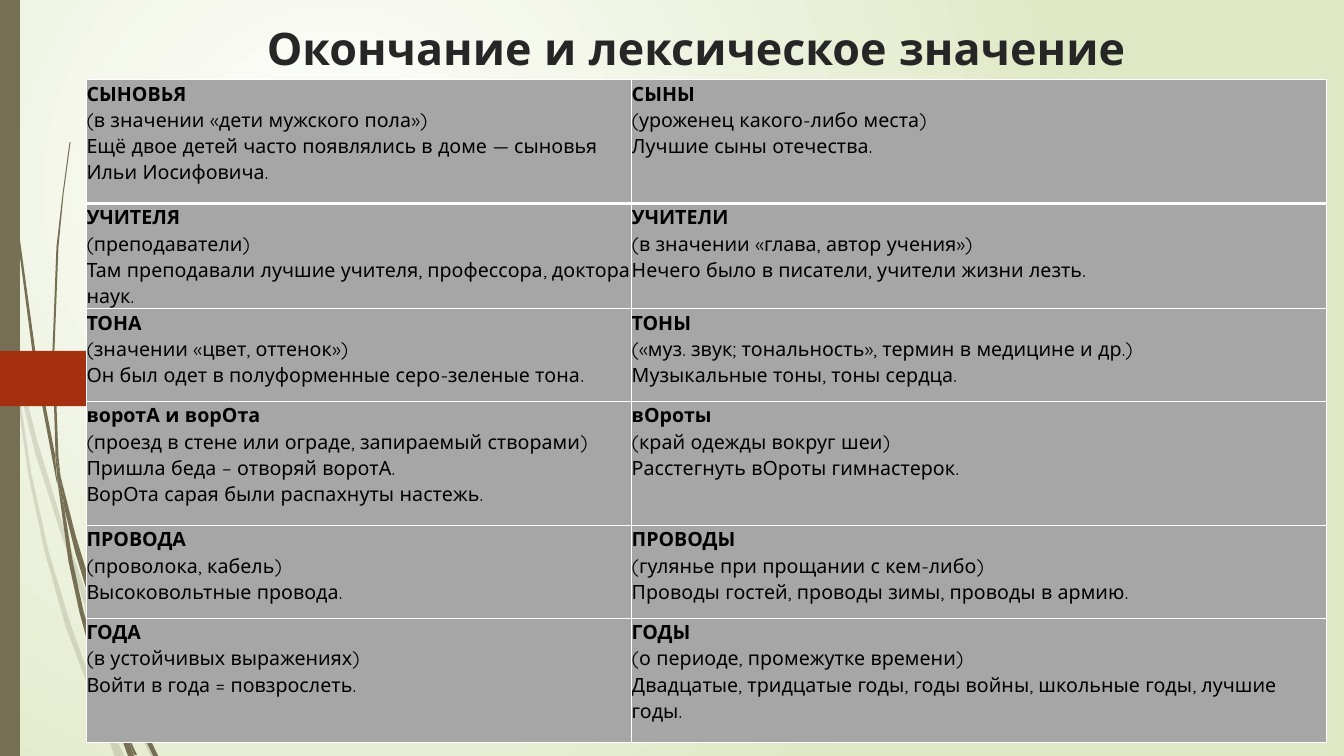
from dataclasses import dataclass

from lxml import etree
from pptx import Presentation
from pptx.dml.color import RGBColor
from pptx.enum.shapes import MSO_SHAPE
from pptx.enum.text import MSO_ANCHOR, PP_ALIGN
from pptx.oxml.ns import qn
from pptx.util import Cm, Pt

RECTANGLE = MSO_SHAPE.RECTANGLE
BOTTOM = MSO_ANCHOR.BOTTOM
CENTER = PP_ALIGN.CENTER
GRID_UNIT = Cm(0.0254)


@dataclass(frozen=True)
class Theme:
    """Colours, font and type sizes of the slide."""
    font: str = "Quicksand"
    title_size: int = 32
    table_size: int = 14
    title: str = "262626"
    text: str = "000000"
    white: str = "FFFFFF"
    glow: str = "DFE8C4"
    stem: str = "766F54"
    marker: str = "A53010"
    cell: str = "A6A6A6"


PALE_STEMS = [
    [(11, 350), (9, 322), (0, 282), (0, 299), (10, 344)],
    [(58, 522), (84, 600), (85, 587), (62, 520), (36, 434), (14, 345), (17, 376), (35, 450)],
    [(92, 607), (88, 596), (88, 610), (123, 694), (150, 751), (155, 751), (127, 692)],
    [(119, 751), (124, 751), (105, 711)],
    [(93, 683), (70, 619), (48, 546), (31, 469), (17, 376), (11, 350), (28, 470), (44, 546),
     (65, 621), (92, 693), (101, 714), (99, 707)],
    [(84, 599), (87, 646), (93, 683), (96, 692), (105, 712), (103, 707), (91, 646),
     (88, 610), (88, 608)],
    [(88, 584), (95, 502), (110, 462), (133, 404), (160, 349), (193, 296), (229, 245),
     (268, 198), (290, 175), (312, 154), (312, 153), (289, 175), (268, 197), (228, 244),
     (191, 294), (158, 348), (130, 402), (107, 461), (92, 502), (85, 584), (85, 586), (88, 596)],
    [(101, 714), (114, 751), (119, 751)],
    [(88, 608), (88, 610), (88, 596), (85, 586), (84, 599)],
    [(96, 692), (93, 683), (99, 707), (101, 714), (119, 751), (105, 711)],
]
DARK_STEMS = [
    [(7, 110), (17, 233), (33, 355), (56, 477), (57, 481), (55, 457), (55, 453), (36, 355),
     (19, 232), (8, 109), (5, 48), (4, 0), (3, 0), (4, 48)],
    [(88, 592), (106, 645), (106, 631), (93, 590), (75, 531), (60, 472), (64, 505), (75, 549)],
    [(113, 649), (110, 641), (111, 656), (132, 708), (152, 750), (157, 750), (136, 706)],
    [(110, 691), (98, 657), (83, 607), (72, 556), (64, 505), (57, 477), (68, 557), (79, 608),
     (93, 659), (111, 708), (117, 722), (116, 717)],
    [(60, 472), (58, 453), (54, 349), (58, 245), (63, 193), (70, 141), (69, 141), (62, 193),
     (56, 245), (52, 349), (55, 449)],
    [(133, 749), (136, 749), (122, 719)],
    [(57, 477), (64, 505), (60, 472), (55, 449), (55, 453)],
    [(111, 633), (116, 592), (125, 552), (139, 513), (158, 476), (180, 440), (205, 406),
     (231, 374), (245, 359), (261, 344), (260, 344), (245, 358), (231, 373), (204, 405),
     (178, 439), (156, 474), (136, 512), (122, 551), (112, 591), (106, 631), (110, 641)],
    [(117, 722), (127, 750), (131, 750)],
    [(106, 645), (110, 691), (116, 706), (122, 719), (121, 716), (111, 656), (109, 651)],
    [(106, 645), (109, 651), (111, 656), (110, 641), (106, 631)],
    [(116, 706), (110, 691), (116, 717), (117, 722), (130, 750), (133, 750), (122, 719)],
]
MARKER = [(0, 348), (146, 348), (148, 349), (173, 374), (174, 376), (173, 377), (148, 402),
          (146, 403), (0, 403)]
COLUMN_WIDTHS = [13.74, 17.5]
ROW_HEIGHTS = [3.12, 2.65, 2.34, 3.12, 2.34, 3.12]
WORD_PAIRS = [
    [["СЫНОВЬЯ", "(в значении «дети мужского пола»)",
      "Ещё двое детей часто появлялись в доме ― сыновья Ильи Иосифовича."],
     ["СЫНЫ", "(уроженец какого-либо места)", "Лучшие сыны отечества."]],
    [["УЧИТЕЛЯ", "(преподаватели)",
      "Там преподавали лучшие учителя, профессора, доктора наук."],
     ["УЧИТЕЛИ", "(в значении «глава, автор учения»)",
      "Нечего было в писатели, учители жизни лезть."]],
    [["ТОНА", "(значении «цвет, оттенок»)", "Он был одет в полуформенные серо-зеленые тона."],
     ["ТОНЫ", "(«муз. звук; тональность», термин в медицине и др.)",
      "Музыкальные тоны, тоны сердца."]],
    [["воротА и ворОта", "(проезд в стене или ограде, запираемый створами)",
      "Пришла беда – отворяй воротА.", "ВорОта сарая были распахнуты настежь."],
     ["вОроты", "(край одежды вокруг шеи)", "Расстегнуть вОроты гимнастерок."]],
    [["ПРОВОДА", "(проволока, кабель)", "Высоковольтные провода."],
     ["ПРОВОДЫ", "(гулянье при прощании с кем-либо)",
      "Проводы гостей, проводы зимы, проводы в армию."]],
    [["ГОДА", "(в устойчивых выражениях)", "Войти в года = повзрослеть."],
     ["ГОДЫ", "(о периоде, промежутке времени)",
      "Двадцатые, тридцатые годы, годы войны, школьные годы, лучшие годы."]],
]


class SlideBuilder:
    """Draws styled elements on one slide."""

    def __init__(self, slide, theme):
        self.slide = slide
        self.theme = theme

    def background(self):
        """Fill the background with a radial glow."""
        fill = self.slide.background.fill
        fill.gradient()
        for stop, color in zip(fill.gradient_stops, (self.theme.white, self.theme.glow)):
            stop.color.rgb = RGBColor.from_string(color)
        linear = self.slide.element.find(".//" + qn("a:lin"))
        radial = etree.Element(qn("a:path"), path="circle")
        etree.SubElement(radial, qn("a:fillToRect"), l="50000", t="50000", r="100000", b="100000")
        linear.getparent().replace(linear, radial)

    def paint(self, shape, color, opacity=100):
        """Give a shape a plain fill without line or shadow."""
        shape.shadow.inherit = False
        shape.line.fill.background()
        shape.fill.solid()
        shape.fill.fore_color.rgb = RGBColor.from_string(color)
        if opacity < 100:
            color_element = shape.fill._xPr.find(".//" + qn("a:srgbClr"))
            etree.SubElement(color_element, qn("a:alpha"), val=str(opacity * 1000))

    def outline(self, points, color, opacity=100):
        """Draw a closed outline through grid points."""
        builder = self.slide.shapes.build_freeform(*points[0], scale=GRID_UNIT)
        builder.add_line_segments(points[1:], close=True)
        self.paint(builder.convert_to_shape(), color, opacity)

    def bar(self, left, top, width, height, color):
        """Draw a filled rectangle."""
        shape = self.slide.shapes.add_shape(RECTANGLE, Cm(left), Cm(top), Cm(width), Cm(height))
        self.paint(shape, color)

    def style_font(self, font, size, color):
        """Apply the theme font with a size and colour."""
        font.name = self.theme.font
        font.size = Pt(size)
        font.color.rgb = RGBColor.from_string(color)

    def title(self, text, left, top, width, height):
        """Write the centred bold title."""
        box = self.slide.shapes.add_textbox(Cm(left), Cm(top), Cm(width), Cm(height))
        frame = box.text_frame
        frame.word_wrap = True
        frame.vertical_anchor = BOTTOM
        paragraph = frame.paragraphs[0]
        paragraph.text = text
        paragraph.alignment = CENTER
        self.style_font(paragraph.font, self.theme.title_size, self.theme.title)
        paragraph.font.bold = True

    def border(self, cell, side, width):
        """Add a white border to one side of a cell."""
        properties = cell._tc.get_or_add_tcPr()
        line = etree.SubElement(properties, qn("a:ln" + side), w=str(Pt(width)))
        fill = etree.SubElement(line, qn("a:solidFill"))
        etree.SubElement(fill, qn("a:srgbClr"), val=self.theme.white)

    def cell(self, cell, lines, top_border, bottom_border):
        """Fill a cell with a bold word and its explanation."""
        cell.margin_left = cell.margin_right = cell.margin_top = cell.margin_bottom = 0
        for side, width in zip("LRTB", (1, 1, top_border, bottom_border)):
            self.border(cell, side, width)
        cell.fill.solid()
        cell.fill.fore_color.rgb = RGBColor.from_string(self.theme.cell)
        paragraph = cell.text_frame.paragraphs[0]
        paragraph.line_spacing = 1.07
        self.style_font(paragraph.font, self.theme.table_size, self.theme.text)
        for index, text in enumerate(lines):
            if index:
                paragraph.add_line_break()
            run = paragraph.add_run()
            run.text = text
            run.font.bold = index == 0

    def table(self, rows, left, top):
        """Draw the table of word pairs."""
        frame = self.slide.shapes.add_table(
            len(rows), len(COLUMN_WIDTHS), Cm(left), Cm(top),
            Cm(sum(COLUMN_WIDTHS)), Cm(sum(ROW_HEIGHTS)))
        table = frame.table
        table.first_row = table.horz_banding = False
        for column, width in zip(table.columns, COLUMN_WIDTHS):
            column.width = Cm(width)
        for row_index, (row, height) in enumerate(zip(rows, ROW_HEIGHTS)):
            table.rows[row_index].height = Cm(height)
            for column_index, lines in enumerate(row):
                self.cell(table.cell(row_index, column_index), lines,
                          3 if row_index == 1 else 1, 3 if row_index == 0 else 1)


def main():
    """Build and save the slide."""
    presentation = Presentation()
    presentation.slide_width = Cm(33.87)
    presentation.slide_height = Cm(19.05)
    theme = Theme()
    builder = SlideBuilder(presentation.slides.add_slide(presentation.slide_layouts[6]), theme)
    builder.background()
    for stems, opacity in ((PALE_STEMS, 20), (DARK_STEMS, 100)):
        for points in stems:
            builder.outline(points, theme.stem, opacity)
    builder.bar(0, 0, 0.5, 19.05, theme.stem)
    builder.outline(MARKER, theme.marker)
    builder.title("Окончание и лексическое значение", 5.16, 0.36, 24.77, 1.65)
    builder.table(WORD_PAIRS, 2.18, 2.01)
    presentation.save("out.pptx")


if __name__ == "__main__":
    main()
